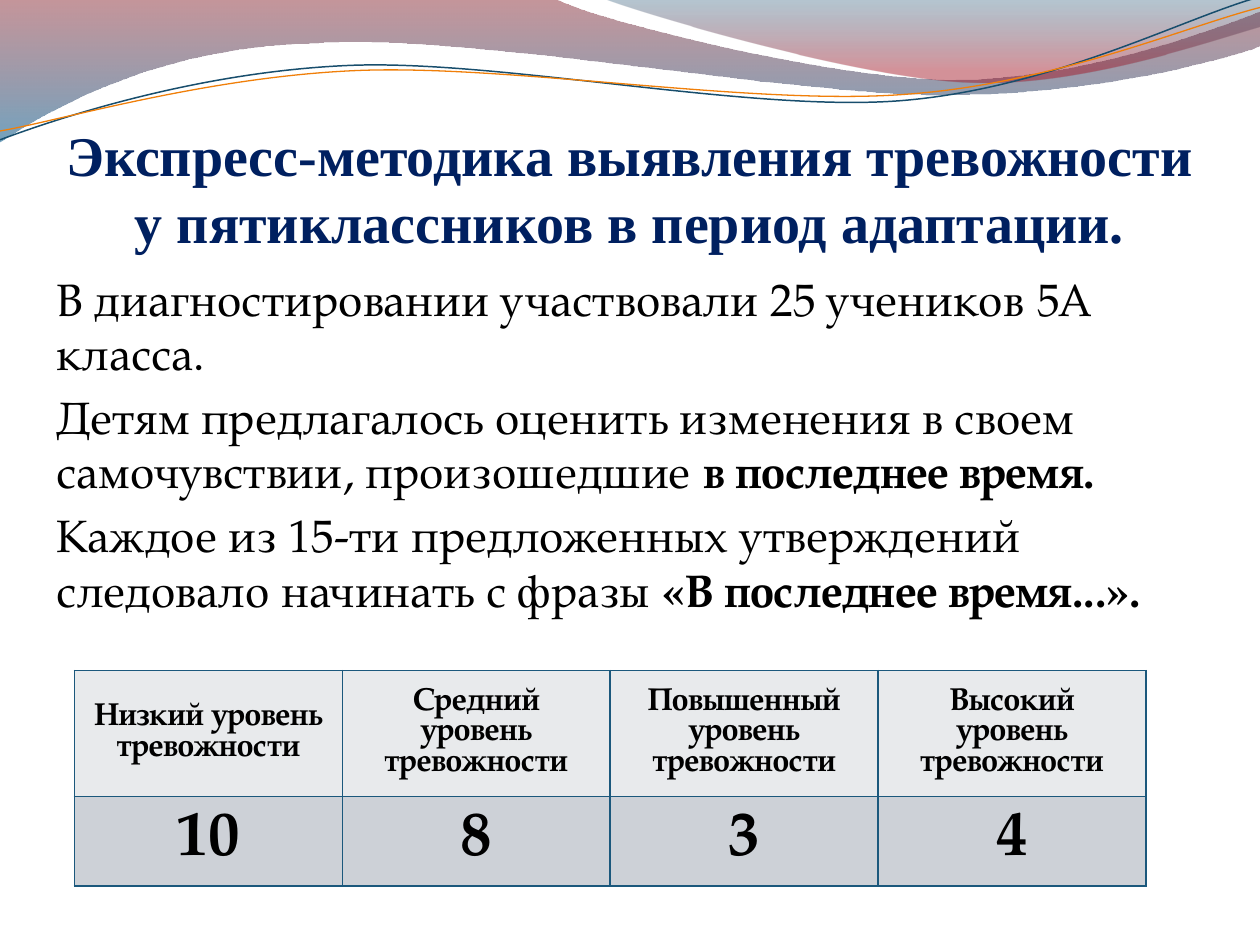
"""Builds a slide on anxiety screening of fifth graders, with a wave header and a results table."""
from math import cos, radians, sin

from lxml import etree
from pptx import Presentation
from pptx.dml.color import RGBColor
from pptx.enum.text import MSO_ANCHOR, MSO_AUTO_SIZE, PP_ALIGN
from pptx.oxml.ns import qn
from pptx.util import Cm, Pt

CENTER = PP_ALIGN.CENTER
MIDDLE, BOTTOM = MSO_ANCHOR.MIDDLE, MSO_ANCHOR.BOTTOM
NO_AUTOFIT = MSO_AUTO_SIZE.NONE
INCH = Cm(2.54)
TILT = 2.7
BODY_FONT = "TeX Gyre Pagella"


def color(value):
    return RGBColor.from_string(value)


def add_span(para, text, **formats):
    span = para.add_run()
    span.text = text
    span.font.color.rgb = color(formats.pop("ink", "000000"))
    for name, value in formats.items():
        setattr(span.font, name, value)


deck = Presentation()
deck.slide_width, deck.slide_height = Cm(25.4), Cm(19.05)
page = deck.slides.add_slide(deck.slide_layouts[5])

waves = [
    {"start": (0, 0),
     "segments": [(4.4, -0.01), (4.76, 0.17, 6.64, 0.63, 7.58, 0.63),
                  (8.53, 0.63, 9.58, 0.26, 10, 0.09), (10.01, 0.36),
                  (9.83, 0.44, 8.7, 0.76, 7.46, 0.75), (6.22, 0.75, 3.82, 0.28, 2.57, 0.34),
                  (1.29, 0.36, 0.46, 0.83, -0.01, 1.13), (0, 0)],
     "stops": [(0, "7E1621", 45), (1, "005689", 55)]},
    {"start": (4.79, -0.01),
     "segments": [(5.09, 0.11, 6.82, 0.62, 7.69, 0.65), (8.56, 0.69, 9.61, 0.32, 10, 0.21),
                  (10, 0), (4.79, -0.01)],
     "stops": [(0, "094467", 30), (0.8, "A10F1F", 45)]},
    {"start": (0, 1.11),
     "segments": [(0.48, 0.93, 1.58, 0.57, 2.77, 0.52), (3.95, 0.47, 5.93, 0.89, 7.13, 0.8),
                  (8.33, 0.71, 9.38, 0.15, 9.98, -0.02)],
     "line": ("184E6D", 0.85), "pivot": (4.99, 0.58)},
    {"start": (0, 1.04),
     "segments": [(0.47, 0.96, 1.64, 0.61, 2.83, 0.56), (4.03, 0.51, 5.97, 0.84, 7.17, 0.75),
                  (8.36, 0.67, 9.41, 0.21, 10, 0.06)],
     "line": ("F07F09", 0.75), "pivot": (5, 0.59)},
]
for wave in waves:
    points = [wave["start"]]
    for segment in wave["segments"]:
        points.extend(zip(segment[::2], segment[1::2]))
    if "pivot" in wave:
        pivot_x, pivot_y = wave["pivot"]
        cosine, sine = cos(radians(TILT)), sin(radians(TILT))
        points = [(pivot_x + (x - pivot_x) * cosine - (y - pivot_y) * sine,
                   pivot_y + (x - pivot_x) * sine + (y - pivot_y) * cosine) for x, y in points]
    points = [(x * 1000, y * 1000) for x, y in points]
    builder = page.shapes.build_freeform(*points[0], scale=INCH / 1000)
    builder.add_line_segments(points[1:], close="stops" in wave)
    shape = builder.convert_to_shape()
    shape.shadow.inherit = False

    corners = iter(list(shape._element.spPr.iter(qn("a:lnTo"))))
    for segment in wave["segments"]:
        corner = next(corners)
        if len(segment) == 6:
            corner.tag = qn("a:cubicBezTo")
            for _ in range(2):
                control = next(corners)
                corner.append(control[0])
                control.getparent().remove(control)

    if "stops" in wave:
        shape.line.fill.background()
        shape.fill.gradient()
        shape.fill.gradient_angle = 270
        for stop, (position, tint, _) in zip(shape.fill.gradient_stops, wave["stops"]):
            stop.position = position
            stop.color.rgb = color(tint)
        tints = list(shape._element.spPr.iter(qn("a:srgbClr")))
        for node, (_, _, opacity) in zip(tints, wave["stops"]):
            etree.SubElement(node, qn("a:alpha"), val=str(opacity * 1000))
    else:
        tint, width = wave["line"]
        shape.rotation = 360 - TILT
        shape.fill.background()
        shape.line.color.rgb = color(tint)
        shape.line.width = Pt(width)

title = page.shapes.title
title.left, title.top, title.width, title.height = Cm(1.27), Cm(1.96), Cm(22.86), Cm(3.17)
frame = title.text_frame
frame_format = {"auto_size": NO_AUTOFIT, "word_wrap": True, "vertical_anchor": BOTTOM,
                "margin_left": 0, "margin_right": 0, "margin_top": Cm(0.13), "margin_bottom": 0}
for name, value in frame_format.items():
    setattr(frame, name, value)
para = frame.paragraphs[0]
para.alignment = CENTER
add_span(para, "Экспресс-методика выявления тревожности у пятиклассников в период адаптации.",
         name="Times New Roman", size=Pt(32), bold=True, ink="002060")

box = page.shapes.add_textbox(Cm(0.89), Cm(5.33), Cm(23.39), Cm(7.59))
frame = box.text_frame
frame.word_wrap = True
statements = [
    ("В диагностировании участвовали 25 учеников 5А класса.", ""),
    ("Детям предлагалось оценить изменения в своем самочувствии, произошедшие ",
     "в последнее время."),
    ("Каждое из 15-ти предложенных утверждений следовало начинать с фразы ",
     "«В последнее время...»."),
]
for index, (plain, strong) in enumerate(statements):
    para = frame.add_paragraph() if index else frame.paragraphs[0]
    para.space_before = Pt(5.2)
    add_span(para, plain, name=BODY_FONT, size=Pt(26))
    if strong:
        add_span(para, strong, name=BODY_FONT, size=Pt(26), bold=True)

levels = {"Низкий": 10, "Средний": 8, "Повышенный": 3, "Высокий": 4}
rows = [
    ([f"{level} уровень тревожности" for level in levels], 18, "E8EAEC"),
    ([str(count) for count in levels.values()], 36, "CDD1D7"),
]
holder = page.shapes.add_table(len(rows), len(levels), Cm(1.5), Cm(13.52), Cm(21.6), Cm(4.34))
table = holder.table
for column in table.columns:
    column.width = Cm(5.4)
for row_index, (texts, size, tint) in enumerate(rows):
    table.rows[row_index].height = Cm(1.8)
    for column_index, text in enumerate(texts):
        cell = table.cell(row_index, column_index)
        cell.vertical_anchor = MIDDLE
        para = cell.text_frame.paragraphs[0]
        para.alignment = CENTER
        add_span(para, text, name=BODY_FONT, size=Pt(size), bold=True)
        properties = cell._tc.get_or_add_tcPr()
        for side in ("lnL", "lnR", "lnT", "lnB"):
            border = etree.SubElement(properties, qn(f"a:{side}"), w=str(Pt(1)))
            paint = etree.SubElement(border, qn("a:solidFill"))
            etree.SubElement(paint, qn("a:srgbClr"), val="1B587C")
        cell.fill.solid()
        cell.fill.fore_color.rgb = color(tint)
holder.height = Cm(4.34)

deck.save("out.pptx")
